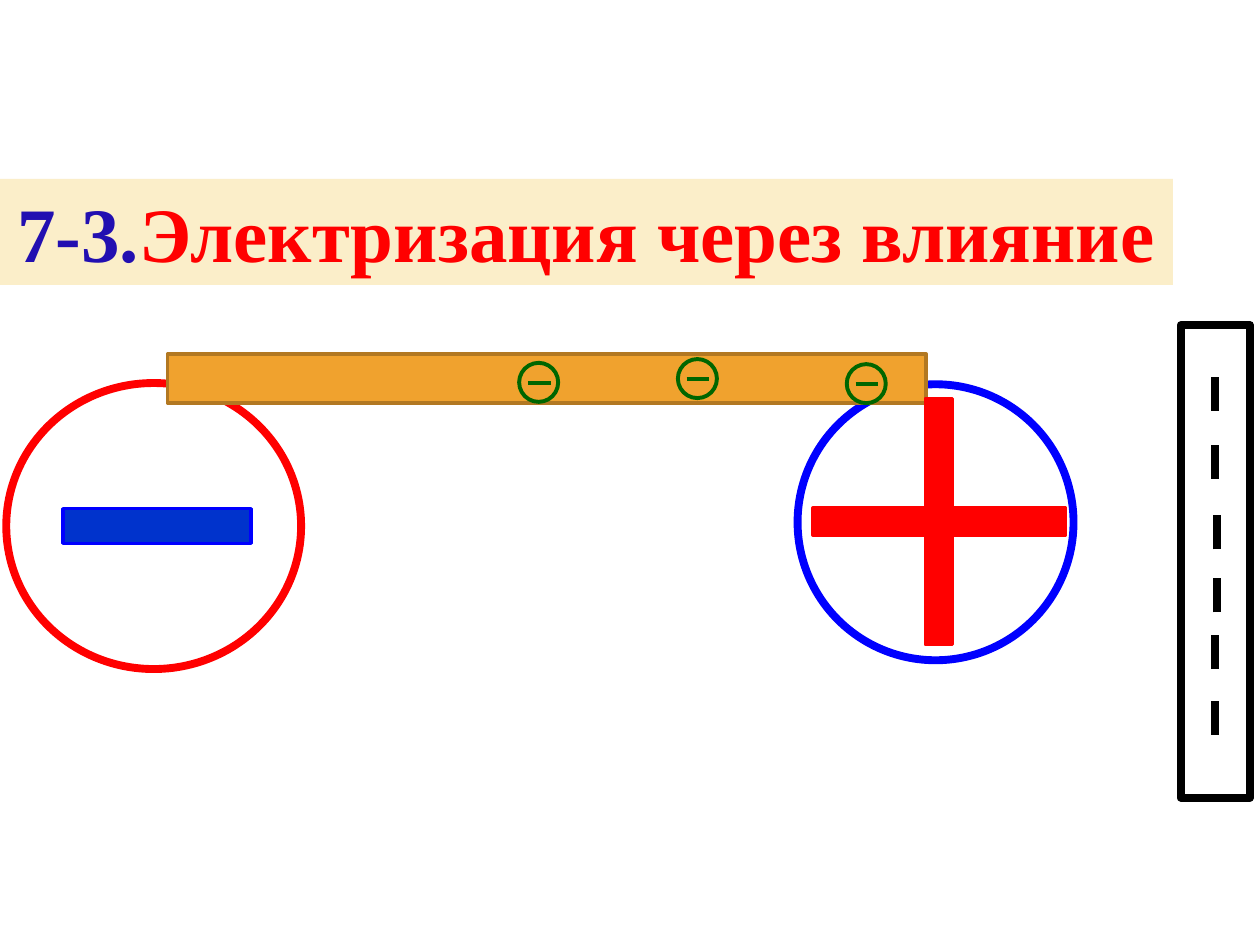
from lxml import etree
from pptx import Presentation
from pptx import util as u
from pptx.dml import color
from pptx.enum import shapes, text
from pptx.oxml import ns

PX = 9144
KIND = shapes.MSO_SHAPE


def rgb(value):
    """Return the colour for a hex string."""
    return color.RGBColor.from_string(value)


def emu(*lengths):
    """Turn px lengths into EMU."""
    return [u.Emu(n * PX) for n in lengths]


def add_figure(parent, kind, box, line, width, fill=None):
    """Add an outlined preset shape, filled if a fill is given."""
    sp = parent.add_shape(kind, *emu(*box))
    sp.shadow.inherit = False
    sp.line.color.rgb = rgb(line)
    sp.line.width = u.Pt(width)
    if fill:
        sp.fill.solid()
        sp.fill.fore_color.rgb = rgb(fill)
    else:
        sp.fill.background()
    return sp


def add_stroke(parent, ends, line, width):
    """Add a straight line without a shadow."""
    c = parent.add_connector(shapes.MSO_CONNECTOR.STRAIGHT, *emu(*ends))
    c.line.color.rgb = rgb(line)
    c.line.width = u.Pt(width)
    etree.SubElement(c._element.spPr, ns.qn("a:effectLst"))


def add_title(s, box):
    """Format the title placeholder as a two-coloured heading on a tinted band."""
    sp = s.shapes.title
    sp.left, sp.top, sp.width, sp.height = emu(*box)
    sp.fill.solid()
    sp.fill.fore_color.rgb = rgb("FBEEC9")
    tf = sp.text_frame
    tf.word_wrap = False
    tf.auto_size = text.MSO_AUTO_SIZE.SHAPE_TO_FIT_TEXT
    p = tf.paragraphs[0]
    p.alignment = text.PP_ALIGN.CENTER
    for words, tint in (("7-3.", "220FB1"), ("Электризация через влияние", "FF0000")):
        r = p.add_run()
        r.text = words
        r.font.name = "Times New Roman"
        r.font.size = u.Pt(44)
        r.font.bold = True
        r.font.color.rgb = rgb(tint)


def add_charged_rod(s, box):
    """Draw the upright rod with its column of negative charges."""
    x, y, w, h = box
    group = s.shapes.add_group_shape().shapes
    lying = (x + (w - h) // 2, y + (h - w) // 2, h, w)
    add_figure(group, KIND.RECTANGLE, lying, "000000", 4.5).rotation = 270
    for dx, dy in ((27, 325), (27, 273), (29, 228), (29, 178), (27, 122), (27, 68)):
        add_stroke(group, (x + dx, y + dy, x + dx, y + dy - 27), "000000", 4.5)


def add_electron(s, box):
    """Draw a circled minus."""
    x, y, w, h = box
    group = s.shapes.add_group_shape().shapes
    middle = y + h // 2 + 1
    add_stroke(group, (x + 7, middle, x + w - 6, middle), "006600", 2.25)
    add_figure(group, KIND.OVAL, box, "006600", 2.25)


def add_conductor(s, box):
    """Draw the bar that joins the spheres."""
    add_figure(s.shapes, KIND.RECTANGLE, box, "B27822", 2, "F0A22E")


def main():
    """Build and save the slide."""
    prs = Presentation()
    prs.slide_width, prs.slide_height = emu(1000, 750)
    s = prs.slides.add_slide(prs.slide_layouts[5])
    add_figure(s.shapes, KIND.OVAL, (5, 304, 234, 227), "FF0000", 4.5)
    add_figure(s.shapes, KIND.OVAL, (633, 305, 219, 219), "0000FF", 4.5)
    add_title(s, (0, 142, 931, 84))
    add_conductor(s, (133, 281, 602, 39))
    add_charged_rod(s, (937, 258, 55, 375))
    plus = add_figure(s.shapes, KIND.MATH_PLUS, (609, 281, 273, 266), "FF0000", 2, "FF0000")
    plus.adjustments[0] = 0.08
    add_figure(s.shapes, KIND.MATH_MINUS, (23, 359, 203, 117), "0000FF", 2, "0033CC")
    for x, y in ((538, 285), (412, 288), (672, 289)):
        add_electron(s, (x, y, 31, 31))
    prs.save("out.pptx")


if __name__ == "__main__":
    main()
